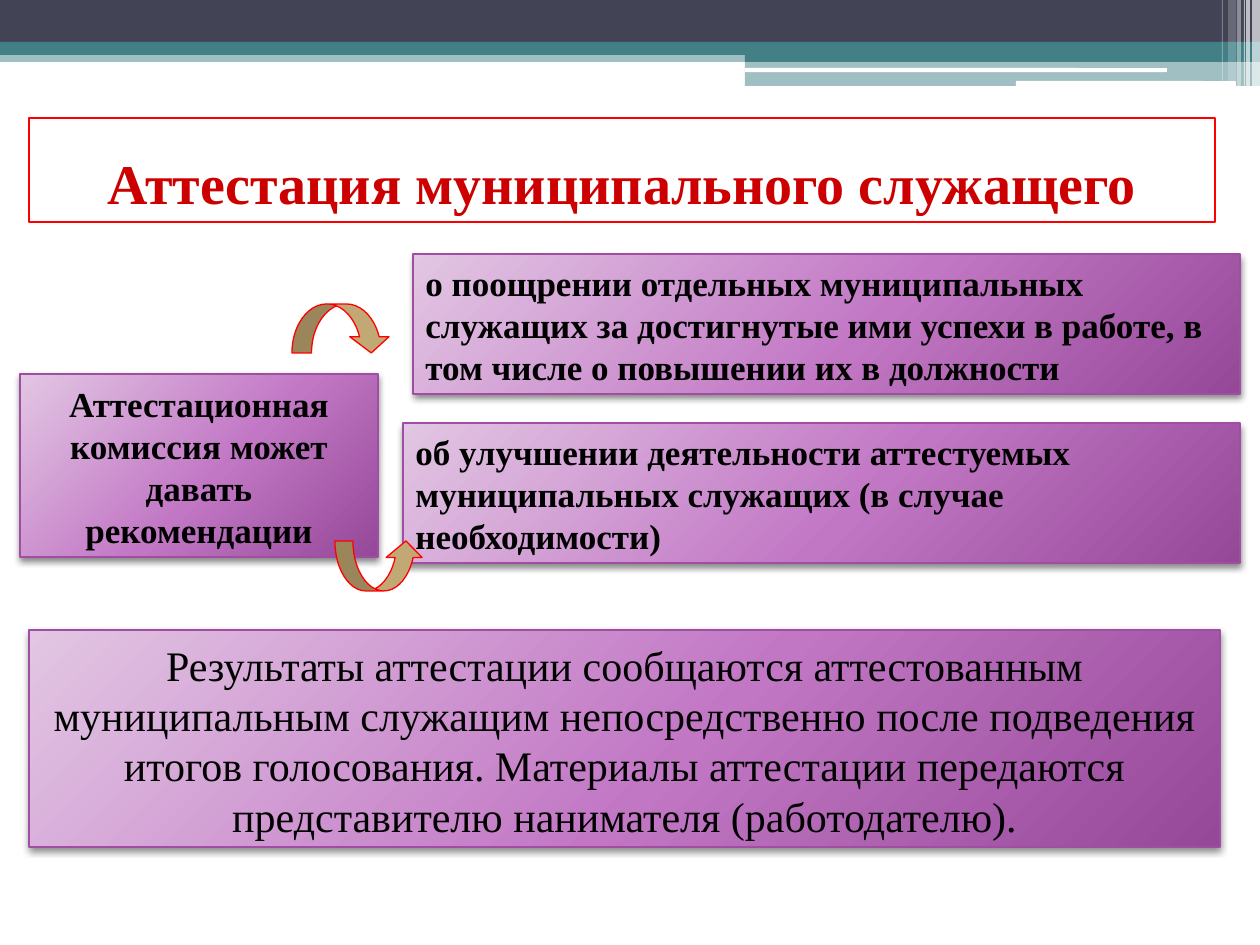
from pptx import Presentation
from pptx.dml.color import RGBColor
from pptx.enum.shapes import MSO_SHAPE
from pptx.enum.text import MSO_ANCHOR, MSO_AUTO_SIZE, PP_ALIGN
from pptx.oxml import parse_xml
from pptx.oxml.ns import nsdecls, qn
from pptx.util import Pt
from lxml import etree

RECT, ROUND = MSO_SHAPE.RECTANGLE, MSO_SHAPE.ROUNDED_RECTANGLE
ARROW_DOWN, ARROW_UP = MSO_SHAPE.CURVED_DOWN_ARROW, MSO_SHAPE.CURVED_UP_ARROW
LEFT, CENTER = PP_ALIGN.LEFT, PP_ALIGN.CENTER
BOTTOM, FIXED = MSO_ANCHOR.BOTTOM, MSO_AUTO_SIZE.NONE

WHITE = RGBColor(0xFF, 0xFF, 0xFF)
BLACK = RGBColor(0, 0, 0)
NAVY = RGBColor(0x42, 0x44, 0x56)
TEAL = RGBColor(0x43, 0x80, 0x86)
RED = RGBColor(0xFF, 0, 0)
TITLE_RED = RGBColor(0xCC, 0, 0)
TAN = RGBColor(0xC2, 0xA8, 0x74)
PURPLE = RGBColor(0xA0, 0x4D, 0xA3)
GRADIENT = [
    (0, RGBColor(0xE2, 0xC6, 0xE3)),
    (55, RGBColor(0xC2, 0x77, 0xC5)),
    (100, RGBColor(0x95, 0x48, 0x98)),
]
FONT = "Times New Roman"
SCALE = 914400 / 126

TITLE = "Аттестация муниципального служащего"
TITLE_BOX = (29, 118, 1186, 104)

BANDS = [
    (RECT, (0, 50, 1260, 12), TEAL, 50),
    (RECT, (0, 0, 1260, 43), NAVY, 100),
    (RECT, (0, 42, 1260, 13), TEAL, 100),
    (RECT, (745, 49, 515, 13), TEAL, 100),
    (RECT, (745, 61, 515, 25), TEAL, 50),
    (ROUND, (745, 68, 422, 4), WHITE, 100),
    (ROUND, (1016, 81, 220, 5), WHITE, 100),
]
STRIPES = [
    (1252, 8, 86, 65),
    (1246, 4, 86, 65),
    (1244, 1, 86, 60),
    (1237, 4, 86, 40),
    (1228, 8, 81, 20),
    (1222, 1, 81, 30),
]
BOXES = [
    ("Результаты аттестации сообщаются аттестованным муниципальным служащим "
     "непосредственно после подведения итогов голосования. Материалы аттестации "
     "передаются представителю нанимателя (работодателю).",
     (29, 630, 1191, 217), 24, False, CENTER),
    ("Аттестационная комиссия может давать рекомендации",
     (20, 374, 358, 183), 20, True, CENTER),
    ("о поощрении отдельных муниципальных служащих за достигнутые ими успехи "
     "в работе, в том числе о повышении их в должности",
     (413, 254, 827, 140), 20, True, LEFT),
    ("об улучшении деятельности аттестуемых муниципальных служащих "
     "(в случае необходимости)",
     (403, 423, 837, 140), 20, True, LEFT),
]
ARROWS = [
    (ARROW_DOWN, (292, 304, 99, 49), (0.4, 0.8, 0.33)),
    (ARROW_UP, (335, 541, 89, 50), (0.36, 0.72, 0.33)),
]


def emu(box):
    return [round(px * SCALE) for px in box]


def add_solid(slide, kind, box, color, opacity=100):
    shape = slide.shapes.add_shape(kind, *emu(box))
    shape.shadow.inherit = False
    shape.fill.solid()
    shape.fill.fore_color.rgb = color
    shape.line.fill.background()
    if opacity < 100:
        srgb = shape.fill._xPr.find(".//" + qn("a:srgbClr"))
        etree.SubElement(srgb, qn("a:alpha"), val=str(opacity * 1000))
    return shape


def outline(shape, color):
    shape.line.color.rgb = color
    shape.line.width = Pt(0.75)


def write(shape, text, size, bold, align, color):
    frame = shape.text_frame
    frame.word_wrap = True
    frame.auto_size = FIXED
    frame.vertical_anchor = BOTTOM
    paragraph = frame.paragraphs[0]
    paragraph.text = text
    paragraph.alignment = align
    font = paragraph.font
    font.name, font.size, font.bold = FONT, Pt(size), bold
    font.color.rgb = color


def add_glow_box(slide, text, box, size, bold, align):
    shape = add_solid(slide, RECT, box, PURPLE)
    outline(shape, PURPLE)
    properties = shape._element.spPr
    stops = "".join(
        f'<a:gs pos="{pos * 1000}"><a:srgbClr val="{color}"/></a:gs>'
        for pos, color in GRADIENT)
    gradient = parse_xml(
        f'<a:gradFill {nsdecls("a")} rotWithShape="1"><a:gsLst>{stops}</a:gsLst>'
        '<a:path path="circle"><a:fillToRect l="-40000" t="-90000" '
        'r="140000" b="190000"/></a:path></a:gradFill>')
    properties.replace(properties.find(qn("a:solidFill")), gradient)
    properties.find(qn("a:effectLst")).append(parse_xml(
        f'<a:outerShdw {nsdecls("a")} blurRad="{Pt(4)}" dist="{Pt(2)}" '
        f'dir="5400000" rotWithShape="0"><a:srgbClr val="{BLACK}">'
        '<a:alpha val="45000"/></a:srgbClr></a:outerShdw>'))
    write(shape, text, size, bold, align, BLACK)


def main():
    deck = Presentation()
    deck.slide_width, deck.slide_height = emu((1260, 945))
    slide = deck.slides.add_slide(deck.slide_layouts[5])

    for band in BANDS:
        add_solid(slide, *band)
    for left, width, height, opacity in STRIPES:
        add_solid(slide, RECT, (left, 0, width, height), WHITE, opacity)
    for box in BOXES:
        add_glow_box(slide, *box)
    for kind, box, bends in ARROWS:
        arrow = add_solid(slide, kind, box, TAN)
        outline(arrow, RED)
        for index, bend in enumerate(bends):
            arrow.adjustments[index] = bend

    title = slide.shapes.title
    title.left, title.top, title.width, title.height = emu(TITLE_BOX)
    outline(title, RED)
    write(title, TITLE, 32, True, CENTER, TITLE_RED)

    deck.save("out.pptx")


if __name__ == "__main__":
    main()
